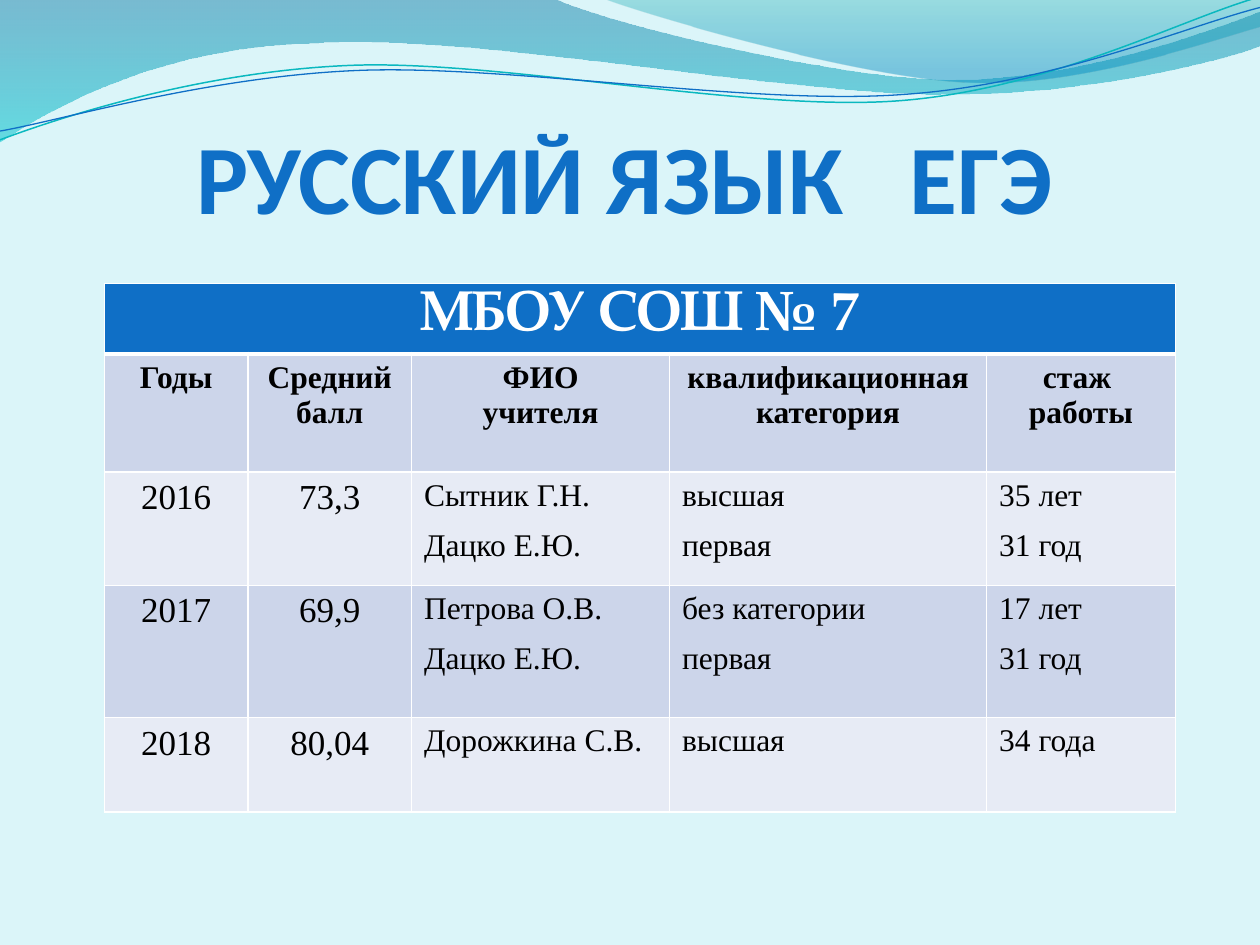
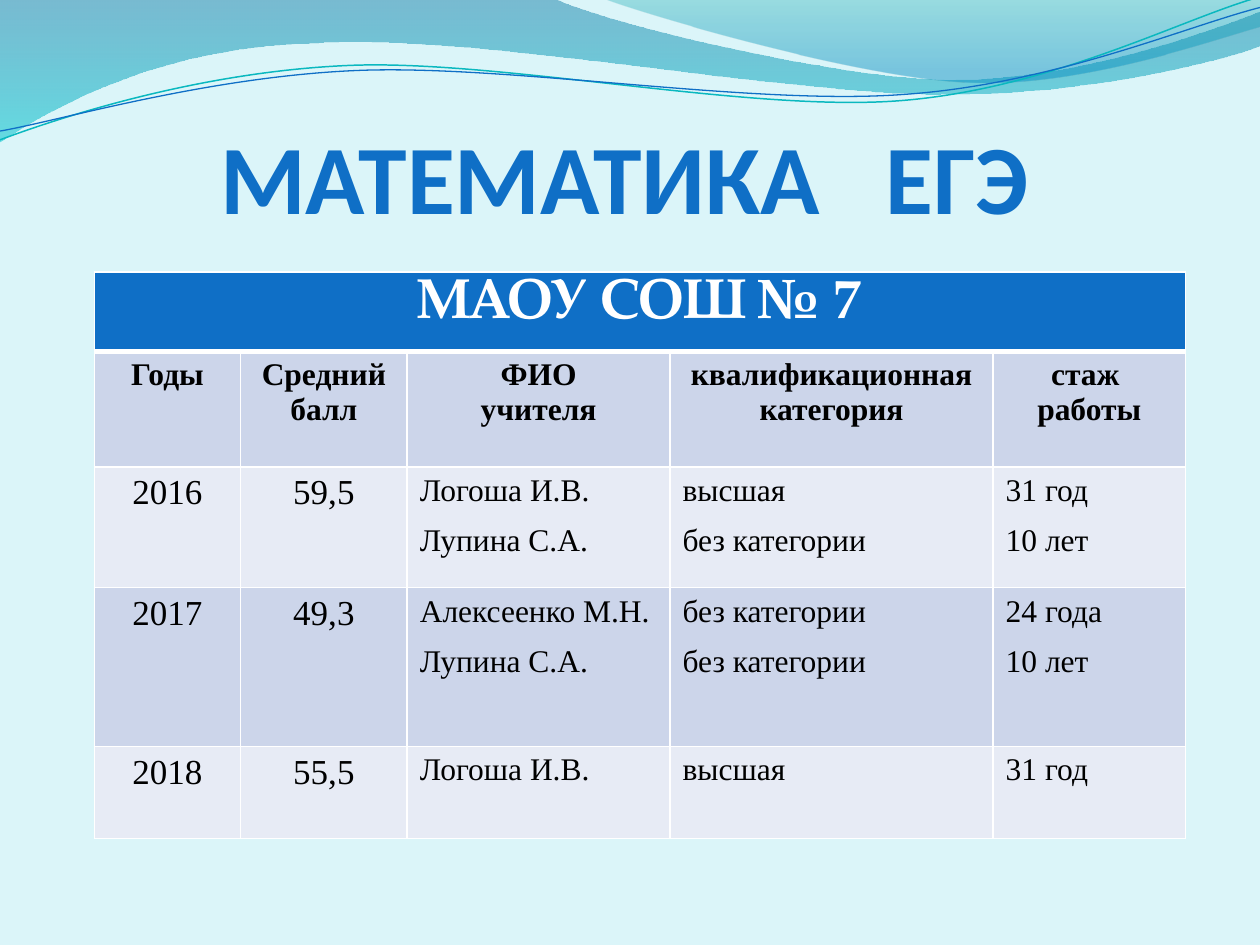
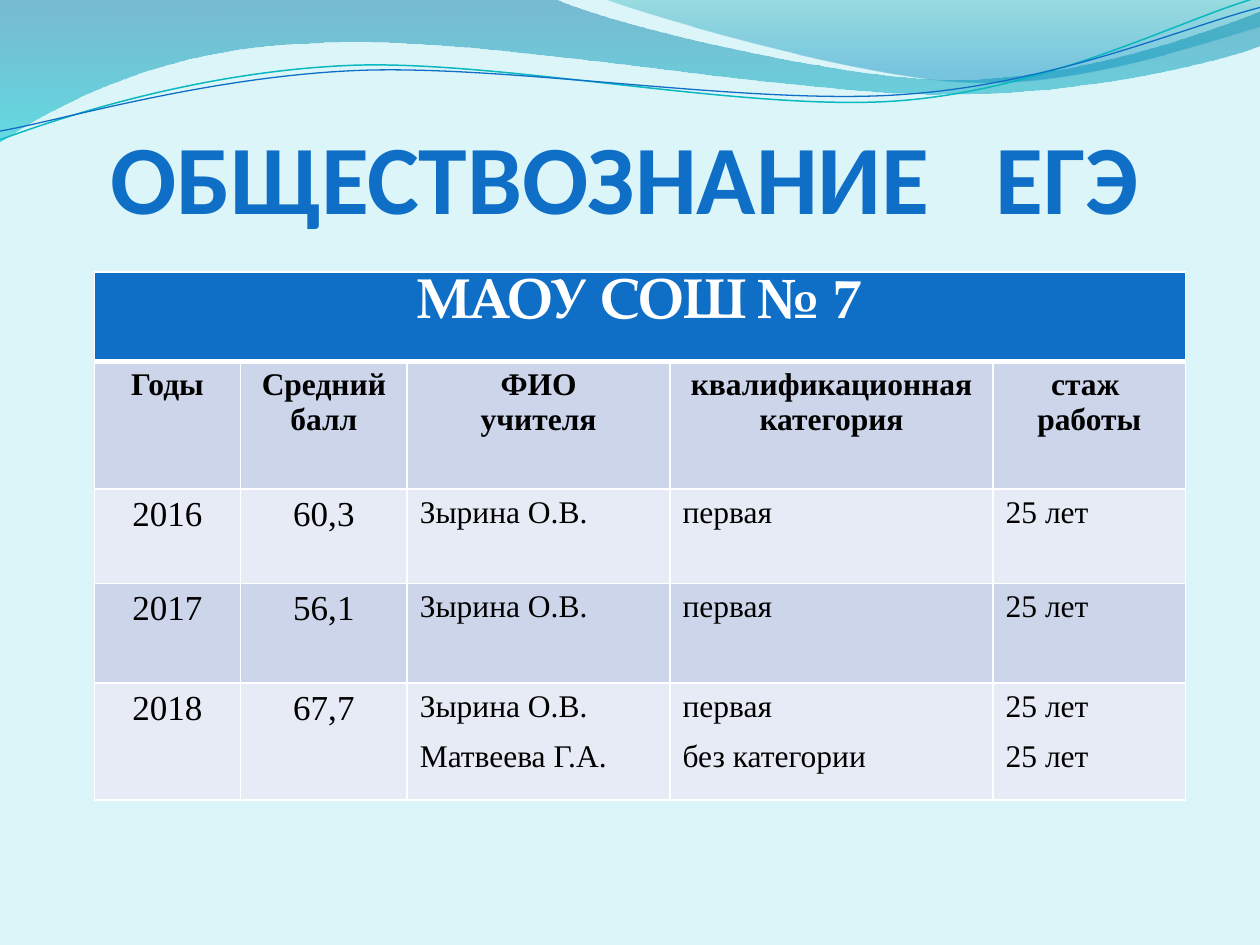
"""Build three slides with exam results of a school, one subject on each."""
from math import cos, radians, sin

from lxml import etree
from pptx import Presentation
from pptx.dml.color import RGBColor
from pptx.enum.text import MSO_ANCHOR, MSO_AUTO_SIZE, PP_ALIGN
from pptx.oxml.ns import qn
from pptx.util import Pt

CENTER = PP_ALIGN.CENTER
LEFT = PP_ALIGN.LEFT
BOTTOM = MSO_ANCHOR.BOTTOM
NO_AUTOFIT = MSO_AUTO_SIZE.NONE

BACKGROUND = "DBF5F9"
BLUE = "0F6FC6"
TEAL = "0AB8BF"
WHITE = "FFFFFF"
BLACK = "000000"
DARK_BAND = "CCD5EA"
LIGHT_BAND = "E7EBF5"

TITLE_FONT = "Calibri"
SCHOOL_FONT = "TeX Gyre Pagella"
TABLE_FONT = "Times New Roman"

TABLE_CENTER = 365.7
COLUMN_SHARES = [114, 130, 205, 252, 150]
COLUMN_HEADS = ["Годы", "Средний балл", "ФИО\nучителя", "квалификационная категория", "стаж \nработы"]

SUBJECTS = [
    {
        "subject": "РУССКИЙ ЯЗЫК", "school": "МБОУ СОШ № 7", "top": 162, "width": 612,
        "heights": [40.2, 67.4, 64.9, 75.6, 54.1],
        "results": [
            ["2016", "73,3", "Сытник Г.Н.\nДацко Е.Ю.", "высшая\nпервая", "35 лет\n31 год"],
            ["2017", "69,9", "Петрова О.В.\nДацко Е.Ю.", "без категории\nпервая", "17 лет\n31 год"],
            ["2018", "80,04", "Дорожкина С.В.", "высшая", "34 года"],
        ],
    },
    {
        "subject": "МАТЕМАТИКА", "school": "МАОУ СОШ № 7", "top": 155.4, "width": 623.5,
        "heights": [45.4, 66, 69.1, 90.7, 52.5],
        "results": [
            ["2016", "59,5", "Логоша И.В.\nЛупина С.А.", "высшая\nбез категории", "31 год\n10 лет"],
            ["2017", "49,3", "Алексеенко М.Н.\nЛупина С.А.", "без категории\nбез категории", "24 года\n10 лет"],
            ["2018", "55,5", "Логоша И.В.", "высшая", "31 год"],
        ],
    },
    {
        "subject": "ОБЩЕСТВОЗНАНИЕ", "school": "МАОУ СОШ № 7", "top": 155.4, "width": 623.5,
        "heights": [51.1, 73, 53.9, 56.9, 66.8],
        "results": [
            ["2016", "60,3", "Зырина О.В.", "первая", "25 лет"],
            ["2017", "56,1", "Зырина О.В.", "первая", "25 лет"],
            ["2018", "67,7", "Зырина О.В.\nМатвеева Г.А.", "первая\nбез категории", "25 лет\n25 лет"],
        ],
    },
]

WAVES = [
    {
        "segments": [
            (0, 0), (316.8, -0.7),
            (342.7, 12.2, 478.1, 45.4, 545.8, 45.4), (614.2, 45.4, 689.8, 18.7, 720, 6.5),
            (720.7, 25.9),
            (707.8, 31.7, 626.4, 54.7, 537.1, 54), (446.4, 54, 275, 20.2, 185, 24.5),
            (92.9, 25.9, 33.1, 59.8, -0.7, 81.4), (0, 0),
        ],
        "gradient": [(0, "0074A1", 45), (1, "00C6CF", 55)],
    },
    {
        "segments": [
            (344.9, -0.7),
            (366.5, 7.9, 491, 44.6, 553.7, 46.8), (616.3, 49.7, 691.9, 23, 720, 15.1),
            (720, 0),
        ],
        "gradient": [(0, "00A1A9", 30), (0.8, "008BBF", 45)],
    },
    {
        "segments": [
            (0, 79.9),
            (34.6, 67, 113.8, 41, 199.4, 37.4), (284.4, 33.8, 427, 64.1, 513.4, 57.6),
            (599.8, 51.1, 675.4, 10.8, 718.6, -1.4),
        ],
        "line": (TEAL, 0.85), "tilt": -2.7, "center": (359.3, 41.4),
    },
    {
        "segments": [
            (0, 74.9),
            (33.8, 69.1, 118.1, 43.9, 203.8, 40.3), (290.2, 36.7, 429.8, 60.5, 516.2, 54),
            (601.9, 48.2, 677.5, 15.1, 720, 4.3),
        ],
        "line": (BLUE, 0.75), "tilt": -2.7, "center": (359.6, 42.5),
    },
]


def color(hex_string):
    return RGBColor.from_string(hex_string)


def format_run(run, font_name, size, hex_string, bold):
    run.font.name = font_name
    run.font.size = Pt(size)
    run.font.bold = bold
    run.font.color.rgb = color(hex_string)


presentation = Presentation()
presentation.slide_width = Pt(720)
presentation.slide_height = Pt(540)
master = presentation.slide_master
master.background.fill.solid()
master.background.fill.fore_color.rgb = color(BACKGROUND)
title_only = presentation.slide_layouts.get_by_name("Title Only")

for exam in SUBJECTS:
    slide = presentation.slides.add_slide(title_only)

    title = slide.shapes.title
    title.left, title.top, title.width, title.height = Pt(54), Pt(82.8), Pt(605.5), Pt(51.1)
    frame = title.text_frame
    frame.margin_left = frame.margin_top = frame.margin_right = frame.margin_bottom = 0
    frame.auto_size = NO_AUTOFIT
    frame.vertical_anchor = BOTTOM
    paragraph = frame.paragraphs[0]
    paragraph.alignment = CENTER
    for text in [exam["subject"], " ", "ЕГЭ"]:
        run = paragraph.add_run()
        run.text = text
        format_run(run, TITLE_FONT, 56, BLUE, True)
        if text == " ":
            run._r.get_or_add_rPr().set("spc", "2450")

    rows = [[exam["school"], "", "", "", ""], COLUMN_HEADS] + exam["results"]
    width = exam["width"]
    table = slide.shapes.add_table(
        len(rows), len(COLUMN_HEADS), Pt(TABLE_CENTER - width / 2), Pt(exam["top"]),
        Pt(width), Pt(sum(exam["heights"]))).table
    table.first_row = False
    table.horz_banding = False
    for column, share in zip(table.columns, COLUMN_SHARES):
        column.width = Pt(width * share / sum(COLUMN_SHARES))
    for row, height in zip(table.rows, exam["heights"]):
        row.height = Pt(height)

    for row_index, texts in enumerate(rows):
        for column_index, text in enumerate(texts):
            cell = table.cell(row_index, column_index)
            border_widths = {
                "a:lnL": 1, "a:lnR": 1,
                "a:lnT": 3 if row_index == 1 else 1,
                "a:lnB": 3 if row_index == 0 else 1,
            }
            properties = cell._tc.get_or_add_tcPr()
            for tag, border_width in border_widths.items():
                border = etree.SubElement(properties, qn(tag), w=str(Pt(border_width)))
                border_fill = etree.SubElement(border, qn("a:solidFill"))
                etree.SubElement(border_fill, qn("a:srgbClr"), val=WHITE)
            cell.fill.solid()
            band = DARK_BAND if row_index % 2 else LIGHT_BAND
            cell.fill.fore_color.rgb = color(BLUE if row_index == 0 else band)

            cell.text_frame.text = text
            for paragraph_index, paragraph in enumerate(cell.text_frame.paragraphs):
                paragraph.alignment = CENTER if row_index < 2 or column_index < 2 else LEFT
                if row_index > 1 and paragraph_index > 0:
                    paragraph.space_before = Pt(8.8)
                for run in paragraph.runs:
                    if row_index == 0:
                        format_run(run, SCHOOL_FONT, 32, WHITE, True)
                    else:
                        size = 20 if row_index > 1 and column_index < 2 else 18
                        format_run(run, TABLE_FONT, size, BLACK, row_index == 1)
    table.cell(0, 0).merge(table.cell(0, len(COLUMN_HEADS) - 1))

for wave_index, wave in enumerate(WAVES):
    tilt = wave.get("tilt", 0)
    center_x, center_y = wave.get("center", (0, 0))
    cosine, sine = cos(radians(tilt)), sin(radians(tilt))
    vertices = []
    for segment in wave["segments"]:
        for x, y in zip(segment[::2], segment[1::2]):
            across, down = x - center_x, y - center_y
            vertices.append((Pt(center_x + across * cosine + down * sine),
                             Pt(center_y - across * sine + down * cosine)))
    builder = slide.shapes.build_freeform(*vertices[0])
    builder.add_line_segments(vertices[1:], close="gradient" in wave)
    shape = builder.convert_to_shape()
    shape.rotation = tilt
    shape.shadow.inherit = False

    steps = iter(list(shape.element.iter(qn("a:lnTo"))))
    for segment in wave["segments"][1:]:
        step = next(steps)
        if len(segment) == 6:
            curve = etree.Element(qn("a:cubicBezTo"))
            step.addprevious(curve)
            for control in [step, next(steps), next(steps)]:
                curve.append(control[0])
                control.getparent().remove(control)

    if "gradient" in wave:
        shape.line.fill.background()
        shape.fill.gradient()
        shape.fill.gradient_angle = 270
        for stop, (position, hex_string, opacity) in zip(shape.fill.gradient_stops, wave["gradient"]):
            stop.position = position
            stop.color.rgb = color(hex_string)
        for element, (position, hex_string, opacity) in zip(
                shape.element.iter(qn("a:srgbClr")), wave["gradient"]):
            etree.SubElement(element, qn("a:alpha"), val=str(opacity * 1000))
    else:
        line_color, line_width = wave["line"]
        shape.fill.background()
        shape.line.color.rgb = color(line_color)
        shape.line.width = Pt(line_width)
    master.shapes.element.insert(2 + wave_index, shape.element)

presentation.save("out.pptx")
